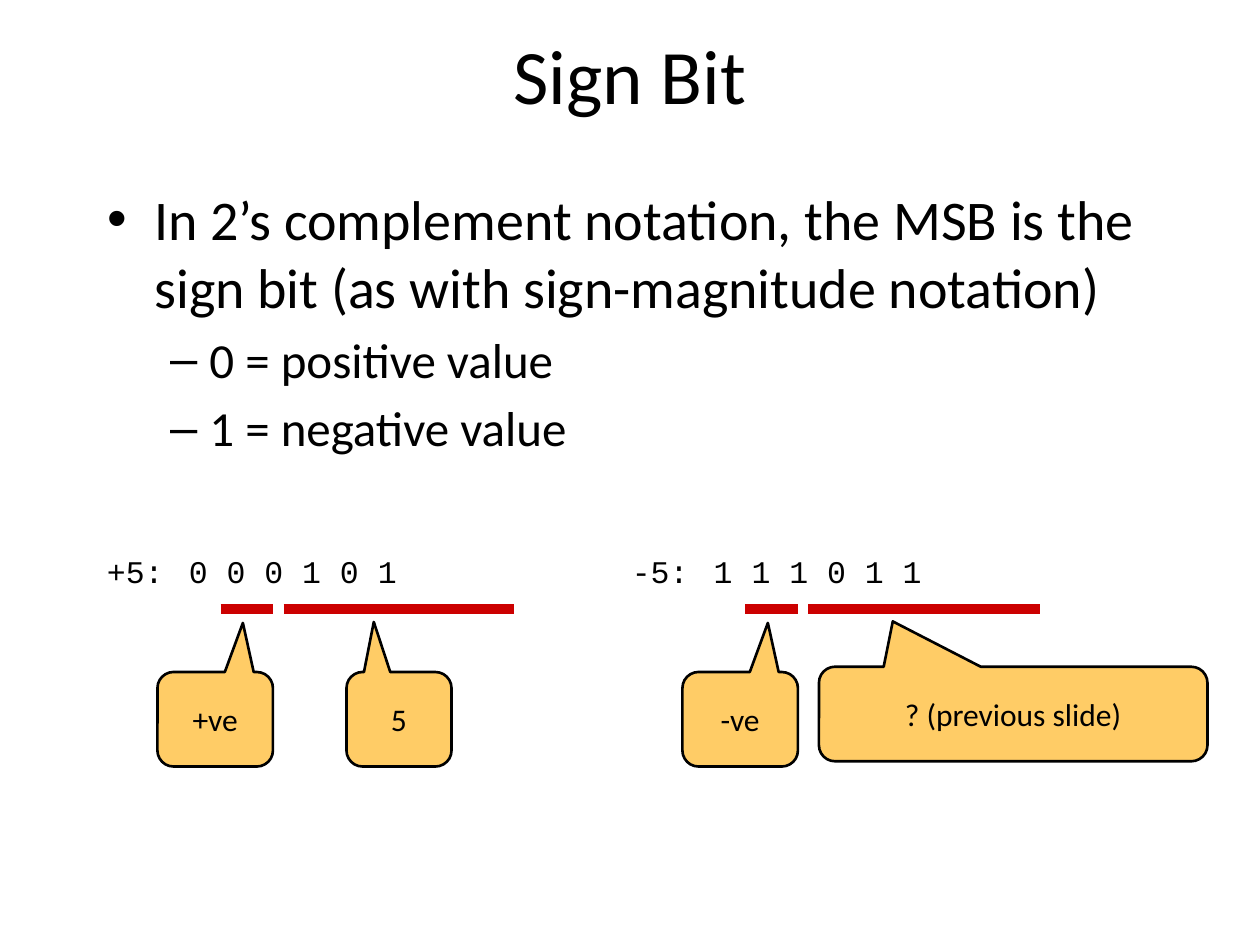
"""Build the Sign Bit slide: bullets above two annotated six-bit examples."""
from lxml import etree
from pptx import Presentation
from pptx.dml.color import RGBColor
from pptx.enum.shapes import MSO_CONNECTOR, MSO_SHAPE
from pptx.enum.text import MSO_ANCHOR, PP_ALIGN
from pptx.oxml.ns import qn
from pptx.util import Inches, Pt

CALLOUT = MSO_SHAPE.ROUNDED_RECTANGULAR_CALLOUT
STRAIGHT = MSO_CONNECTOR.STRAIGHT
MIDDLE, TOP = MSO_ANCHOR.MIDDLE, MSO_ANCHOR.TOP
CENTER, LEFT = PP_ALIGN.CENTER, PP_ALIGN.LEFT

WIDTH, HEIGHT = Inches(10), Inches(7.5)
COLUMNS = 120
CELL = WIDTH / COLUMNS

TITLE = "Sign Bit"
BULLETS = [
    (0, "In 2’s complement notation, the MSB is the sign bit (as with sign-magnitude notation)"),
    (1, "0 = positive value"),
    (1, "1 = negative value"),
]
BULLET_SIZES = [32, 28]
TITLE_BOX = (9, 2, 102, 10)
BODY_BOX = (9, 17, 102, 54)

# Callouts: label, box measured from the example's left edge, pointer adjustments
EXAMPLES = [
    {"left": 9, "bits": "+5:\t 0 0 0 1 0 1", "callouts": [
        ("+ve", (6, 64, 11, 9), (0.24, -1.02, 0.17)),
        ("5", (24, 64, 10, 9), (-0.24, -1.03, 0.17)),
    ]},
    {"left": 59, "bits": "-5:\t 1 1 1 0 1 1", "callouts": [
        ("-ve", (6, 64, 11, 9), (0.24, -1.02, 0.17)),
        ("? (previous slide)", (19, 63.5, 37, 9), (-0.31, -0.98, 0.17)),
    ]},
]
BITS_BOX = (0, 52, 43, 4.8)
UNDERLINES = [(12, 17), (18, 40)]
UNDERLINE_ROW = 58


def color(hex_code):
    return RGBColor.from_string(hex_code)


def cells(*counts):
    return [round(count * CELL) for count in counts]


def shifted(box, left):
    return cells(box[0] + left, *box[1:])


def place(placeholder, box):
    for side, value in zip(("left", "top", "width", "height"), cells(*box)):
        setattr(placeholder, side, value)


def style(paragraph, size, family="Calibri", align=LEFT):
    paragraph.alignment = align
    for name, value in {"size": Pt(size), "name": family}.items():
        setattr(paragraph.font, name, value)
    paragraph.font.color.rgb = color("000000")


def write(frame, wording, anchor, *look):
    frame.text = wording
    frame.word_wrap = True
    frame.vertical_anchor = anchor
    style(frame.paragraphs[0], *look)


def add_underline(group, start, end):
    underline = group.shapes.add_connector(
        STRAIGHT, *cells(start, UNDERLINE_ROW, end, UNDERLINE_ROW))
    underline.line.color.rgb = color("CC0000")
    underline.line.width = Pt(6)
    etree.SubElement(underline._element.spPr, qn("a:effectLst"))


def add_callout(group, label, box, pointer):
    callout = group.shapes.add_shape(CALLOUT, *box)
    for index, value in enumerate(pointer):
        callout.adjustments[index] = value
    callout.shadow.inherit = False
    callout.fill.solid()
    callout.fill.fore_color.rgb = color("FFCC66")
    callout.line.color.rgb = color("000000")
    callout.line.width = Pt(1.5)
    write(callout.text_frame, label, MIDDLE, 18, "Calibri", CENTER)


def add_example(slide, left, bits, callouts):
    group = slide.shapes.add_group_shape()
    bits_box = group.shapes.add_textbox(*shifted(BITS_BOX, left))
    write(bits_box.text_frame, bits, TOP, 18, "Courier New")
    for start, end in UNDERLINES:
        add_underline(group, left + start, left + end)
    for label, box, pointer in callouts:
        add_callout(group, label, shifted(box, left), pointer)


def main():
    deck = Presentation()
    deck.slide_width, deck.slide_height = WIDTH, HEIGHT
    slide = deck.slides.add_slide(deck.slide_layouts[1])
    title, body = slide.placeholders
    place(title, TITLE_BOX)
    write(title.text_frame, TITLE, MIDDLE, 44, "Calibri", CENTER)
    place(body, BODY_BOX)
    body.text_frame.text = "\n".join(wording for _, wording in BULLETS)
    for paragraph, (level, _) in zip(body.text_frame.paragraphs, BULLETS):
        paragraph.level = level
        style(paragraph, BULLET_SIZES[level])
    for example in EXAMPLES:
        add_example(slide, **example)
    deck.save("out.pptx")


if __name__ == "__main__":
    main()
